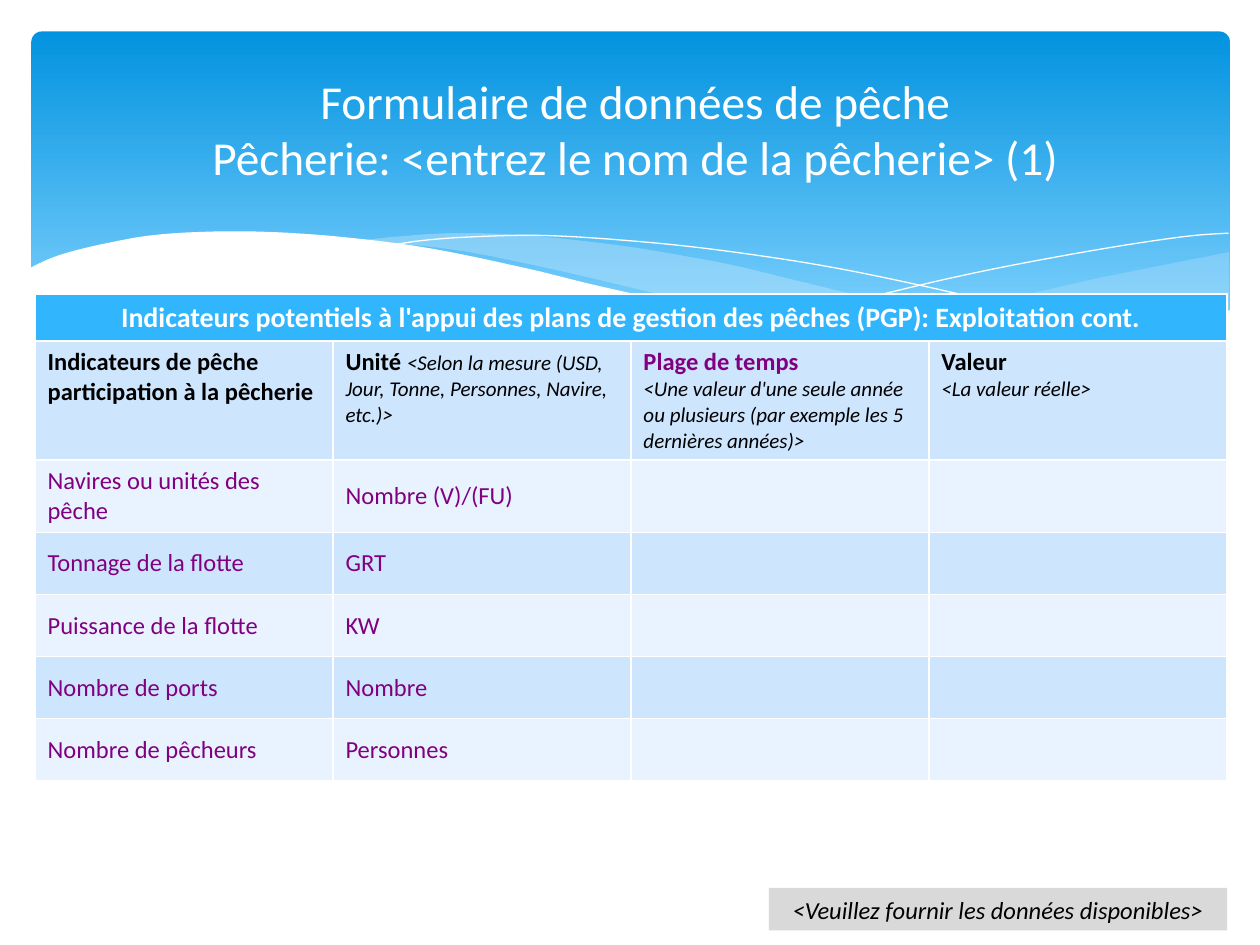
from lxml.etree import SubElement as Sub
from pptx import Presentation
from pptx.dml.color import RGBColor as Rgb
from pptx.enum.shapes import MSO_SHAPE as Kind
from pptx.enum.text import MSO_ANCHOR as Anchor, MSO_AUTO_SIZE as Auto, PP_ALIGN as Align
from pptx.oxml.ns import qn
from pptx.util import Pt

WHITE, BLACK, PURPLE = "FFFFFF", "000000", "800080"
MIST, SKY, PALE, BLUE = "C6E7FC", "CEE5FE", "E8F3FF", "31B6FD"

# Knots of the banner's curves, in points
RIGHT_TOP = [(702.5, 144), (641, 156.2), (620, 160.6), (561, 174.2), (508, 185), (476, 190.8)]
RIGHT_LOW = [(476, 190.8), (518, 195.8), (562, 199), (594, 199.8), (621, 198.7),
             (652, 194.4), (678, 187.6), (702.5, 177.8)]
MID_LOW = [(206, 137.5), (261, 143), (323, 155.5), (407, 175.7), (456, 187.9),
           (510, 195.8), (548, 199), (589, 200.2), (643, 196.6)]
MID_TOP = [(643, 196.6), (581, 187.2), (508, 172.8), (453, 159.8), (420.5, 151.9),
           (389.5, 146), (352, 140), (302, 134.6), (260, 133.2), (225, 135.4), (206, 137.5)]
FALL = [(222.5, 140.4), (241, 137.5), (269, 135.4), (311.8, 134.6), (367, 138.2),
        (419, 144), (479, 153.4), (547, 167.8), (598, 180.7), (653, 195.8)]
RISE = [(441.4, 185), (500, 169.2), (559, 155.5), (623.5, 143.3), (675, 135.4), (702, 133.2)]
FRONT = [(703.4, 177.1), (669.6, 188.6), (630, 196.6), (583, 199.4), (536, 198),
         (481, 190.8), (417, 180), (342, 163.4), (301, 153.4), (245, 141.8),
         (195, 135.4), (152, 132.5), (116, 132.5), (85.7, 134.6), (61, 139),
         (42.5, 143.3), (29, 147.6), (16.6, 153.4)]
BASE = [(16.6, 236.9), (703.4, 236.9)]

# Table text: cells hold paragraphs, paragraphs hold (text, size, colour, style)
HEAD = [
    [[("Indicateurs de pêche participation à la pêcherie", 14, BLACK, "b")]],
    [[("Unité ", 14, BLACK, "b"),
      ("<Selon la mesure (USD, Jour, Tonne, Personnes, Navire, etc.)>", 12, BLACK, "i")]],
    [[("Plage de temps", 14, PURPLE, "b")],
     [("<Une valeur d'une seule année ou plusieurs (par exemple les 5 dernières années)>",
       12, BLACK, "i")]],
    [[("Valeur", 14, BLACK, "b")], [("<La valeur réelle>", 12, BLACK, "i")]],
]
ROWS = [
    ("Navires ou unités des pêche", "Nombre (V)/(FU)"),
    ("Tonnage de la flotte", "GRT"),
    ("Puissance de la flotte", "KW"),
    ("Nombre de ports", "Nombre"),
    ("Nombre de pêcheurs", "Personnes"),
]


def color(code):
    return Rgb.from_string(code)


def smooth(knots, steps=6):
    """Catmull-Rom curve through the knots."""
    ends = [knots[0], *knots, knots[-1]]
    curve = [knots[0]]
    for a, b, c, d in zip(ends, ends[1:], ends[2:], ends[3:]):
        for n in range(1, steps + 1):
            t = n / steps
            curve.append(tuple(
                (2 * q + (r - p) * t + (2 * p - 5 * q + 4 * r - s) * t ** 2
                 + (3 * q - p - 3 * r + s) * t ** 3) / 2
                for p, q, r, s in zip(a, b, c, d)))
    return curve


class Deck:
    face = "Calibri"

    def __init__(self, prs):
        self.slide = prs.slides.add_slide(prs.slide_layouts[5])
        self.shapes = self.slide.shapes

    def style(self, run, size, tone, style=""):
        font = run.font
        font.name, font.size = self.face, Pt(size)
        font.color.rgb = color(tone)
        font.bold, font.italic = style == "b", style == "i"

    def fill_text(self, frame, paras, align=Align.LEFT):
        frame.text = "\n".join("" for _ in paras)
        for para, parts in zip(frame.paragraphs, paras):
            para.alignment = align
            for text, *look in parts:
                run = para.add_run()
                run.text = text
                self.style(run, *look)

    def box(self, kind, x, y, w, h, fill=None):
        shape = self.shapes.add_shape(kind, Pt(x), Pt(y), Pt(w), Pt(h))
        shape.shadow.inherit = False
        shape.line.fill.background()
        if fill:
            shape.fill.solid()
            shape.fill.fore_color.rgb = color(fill)
        return shape

    def banner(self, x, y, w, h, stops):
        shape = self.box(Kind.ROUNDED_RECTANGLE, x, y, w, h)
        shape.adjustments[0] = 0.03
        shape.fill.gradient()
        shape.fill.gradient_angle = 270
        for stop, (place, tone) in zip(shape.fill.gradient_stops, stops):
            stop.position, stop.color.rgb = place, color(tone)

    def curve(self, points, fill=None, alpha=100):
        spots = [(Pt(x), Pt(y)) for x, y in points]
        outline = self.shapes.build_freeform(*spots[0])
        outline.add_line_segments(spots[1:], close=bool(fill))
        shape = outline.convert_to_shape()
        shape.shadow.inherit = False
        if not fill:
            shape.fill.background()
            shape.line.color.rgb = color(WHITE)
            shape.line.width = Pt(0)
            return
        shape.line.fill.background()
        shape.fill.solid()
        shape.fill.fore_color.rgb = color(fill)
        if alpha < 100:
            tone = shape._element.spPr.find(qn("a:solidFill"))[0]
            Sub(tone, qn("a:alpha"), val=str(alpha * 1000))

    def cell(self, cell, fill):
        props = cell._tc.get_or_add_tcPr()
        for side in "LRTB":
            edge = Sub(props, qn("a:ln" + side), w=str(Pt(1)))
            Sub(Sub(edge, qn("a:solidFill")), qn("a:srgbClr"), val=WHITE)
        cell.fill.solid()
        cell.fill.fore_color.rgb = color(fill)

    def table(self, x, y, w, heights, title, head, rows):
        cols = len(head)
        grid = self.shapes.add_table(len(heights), cols, Pt(x), Pt(y), Pt(w),
                                     Pt(sum(heights))).table
        for col in grid.columns:
            col.width = Pt(w / cols)
        for i, height in enumerate(heights):
            grid.rows[i].height = Pt(height)
            for cell in grid.rows[i].cells:
                self.cell(cell, BLUE if i == 0 else SKY if i % 2 else PALE)
                if i > 1:
                    cell.vertical_anchor = Anchor.MIDDLE
        grid.cell(0, 0).merge(grid.cell(0, cols - 1))
        self.fill_text(grid.cell(0, 0).text_frame, [[(title, 16, WHITE, "b")]], Align.CENTER)
        for j, paras in enumerate(head):
            self.fill_text(grid.cell(1, j).text_frame, paras)
        for i, row in enumerate(rows, 2):
            for j, text in enumerate(row):
                self.fill_text(grid.cell(i, j).text_frame, [[(text, 14, PURPLE)]])

    def note(self, x, y, w, h, text):
        shape = self.box(Kind.RECTANGLE, x, y, w, h, "D9D9D9")
        shape.text_frame.vertical_anchor = Anchor.MIDDLE
        self.fill_text(shape.text_frame, [[(text, 14, BLACK, "i")]], Align.CENTER)

    def title(self, x, y, w, h, text, size=27):
        shape = self.shapes.title
        shape.left, shape.top, shape.width, shape.height = Pt(x), Pt(y), Pt(w), Pt(h)
        frame = shape.text_frame
        frame.auto_size, frame.vertical_anchor = Auto.NONE, Anchor.MIDDLE
        frame.text = text
        para = frame.paragraphs[0]
        para.alignment = Align.CENTER
        for run in para.runs:
            self.style(run, size, WHITE)
        for gap in para._p.findall(qn("a:br")):
            Sub(gap, qn("a:rPr"), sz=str(size * 100))
        self.shapes._spTree.append(shape._element)  # bring to front


def main():
    prs = Presentation()
    prs.slide_width, prs.slide_height = Pt(720), Pt(540)
    deck = Deck(prs)

    # Banner with waves
    deck.banner(18, 18, 684.7, 194.4, [(0, "0293E0"), (0.9, "83D3FE")])
    deck.curve(smooth(RIGHT_TOP) + smooth(RIGHT_LOW), MIST, 29)
    deck.curve(smooth(MID_LOW) + smooth(MID_TOP), MIST, 40)
    deck.curve(smooth(FALL))
    deck.curve(smooth(RISE))
    deck.curve(smooth(FRONT) + BASE, WHITE)

    # Indicators, note and title
    deck.table(20, 168, 681, [19.6, 56.2] + [35.5] * len(ROWS),
               "Indicateurs potentiels à l'appui des plans de gestion des pêches (PGP): "
               "Exploitation cont.", HEAD, ROWS)
    deck.note(439.4, 507.4, 261.8, 24.3, "<Veuillez fournir les données disponibles>")
    deck.title(20, 37.5, 686, 72,
               "Formulaire de données de pêche\vPêcherie: <entrez le nom de la pêcherie> (1)")
    prs.save("out.pptx")


if __name__ == "__main__":
    main()
